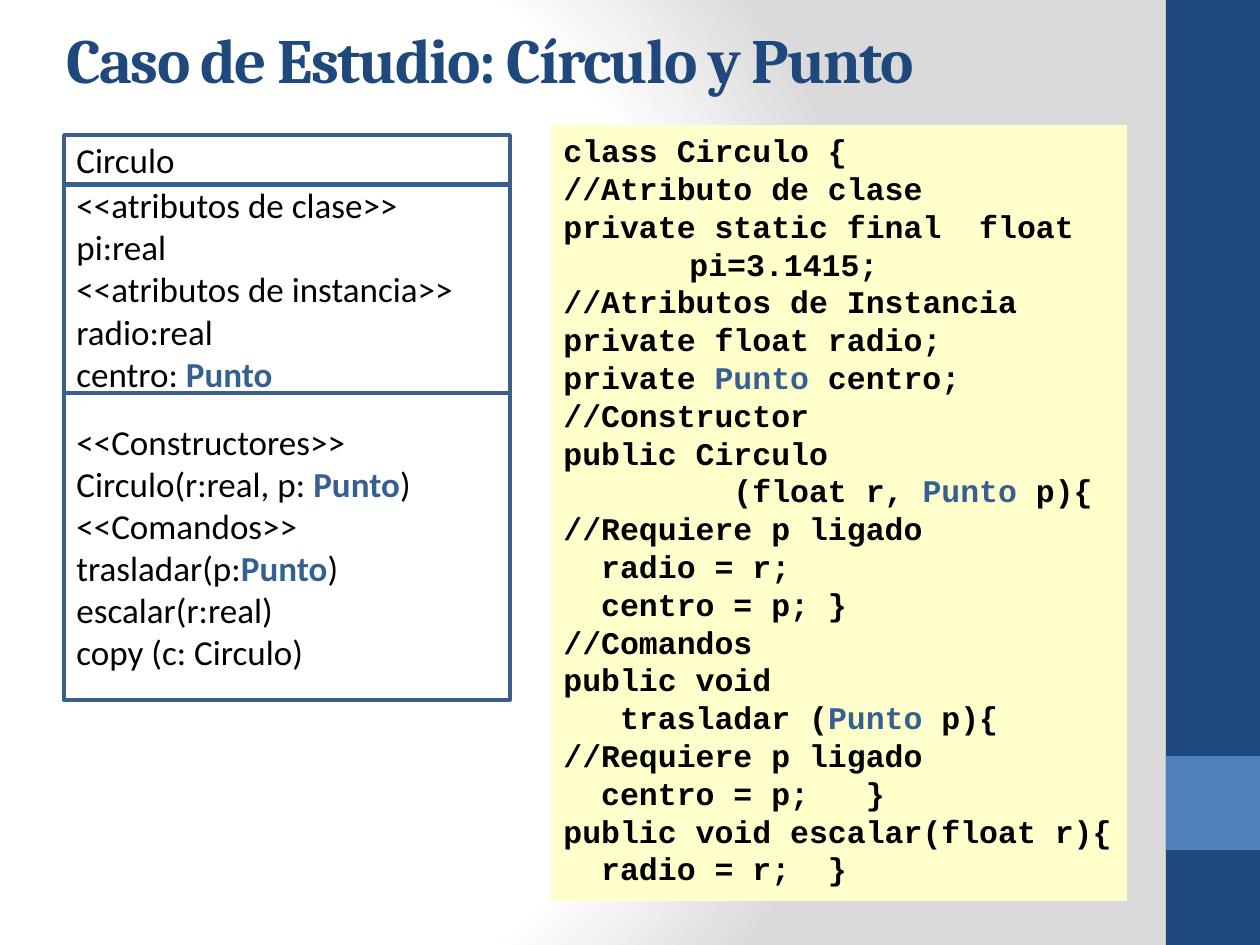
from dataclasses import dataclass

from pptx import Presentation
from pptx.dml.color import RGBColor as RGB
from pptx.enum.shapes import MSO_SHAPE as Shape
from pptx.enum.text import MSO_ANCHOR as Anchor, PP_ALIGN as Align
from pptx.oxml import parse_xml
from pptx.util import Pt

PX = 914400 / 126
WIDE, HIGH = 1260, 945
KEY = "Punto"


@dataclass(frozen=True)
class Theme:
    navy: str = "1F497D"
    blue: str = "4F81BD"
    edge: str = "3A5F8C"
    key: str = "376092"
    cream: str = "FFFFCC"
    white: str = "FFFFFF"
    gray: str = "DADADA"
    ink: str = "000000"
    head: tuple = ("Cambria", 36)
    body: tuple = ("Calibri", 20)
    code: tuple = ("Courier New", 18)


def emu(px):
    return round(px * PX)


class Deck:
    def __init__(self, theme):
        self.theme = theme
        self.prs = Presentation()
        self.prs.slide_width, self.prs.slide_height = emu(WIDE), emu(HIGH)
        self.slide = self.prs.slides.add_slide(self.prs.slide_layouts[6])

    def back(self):
        """Fill the background with a round gradient from white to gray."""
        t = self.theme
        stops = "".join(
            f'<a:gs pos="{pos * 1000}"><a:srgbClr val="{hue}"/></a:gs>'
            for pos, hue in ((0, t.white), (75, t.white), (100, t.gray)))
        self.slide.element.cSld.insert(0, parse_xml(
            '<p:bg xmlns:p="http://schemas.openxmlformats.org/presentationml/2006/main"'
            ' xmlns:a="http://schemas.openxmlformats.org/drawingml/2006/main">'
            f'<p:bgPr><a:gradFill rotWithShape="1"><a:gsLst>{stops}</a:gsLst>'
            '<a:path path="circle"><a:fillToRect l="20000" t="50000" r="100000"'
            ' b="50000"/></a:path></a:gradFill><a:effectLst/></p:bgPr></p:bg>'))

    def rect(self, x, y, w, h, fill, line=None):
        box = self.slide.shapes.add_shape(
            Shape.RECTANGLE, emu(x), emu(y), emu(w), emu(h))
        box.shadow.inherit = False
        box.fill.solid()
        box.fill.fore_color.rgb = RGB.from_string(fill)
        if line:
            box.line.color.rgb = RGB.from_string(line)
            box.line.width = Pt(2)
        else:
            box.line.fill.background()
        return box

    def style(self, par, font, hue, bold):
        par.alignment = Align.LEFT
        par.font.name, size = font
        par.font.size = Pt(size)
        par.font.bold = bold
        par.font.color.rgb = RGB.from_string(hue)

    def title(self, x, y, w, h, text):
        box = self.slide.shapes.add_textbox(emu(x), emu(y), emu(w), emu(h))
        frame = box.text_frame
        frame.word_wrap = True
        frame.vertical_anchor = Anchor.BOTTOM
        par = frame.paragraphs[0]
        self.style(par, self.theme.head, self.theme.navy, True)
        run = par.add_run()
        run.text = text
        run._r.get_or_add_rPr().set("spc", "-100")

    def lines(self, box, rows, font, bold=False, anchor=Anchor.MIDDLE, hang=0):
        """Write rows; leading spaces become indents, wrapped lines hang."""
        frame = box.text_frame
        frame.word_wrap = True
        frame.vertical_anchor = anchor
        for i, row in enumerate(rows):
            par = frame.add_paragraph() if i else frame.paragraphs[0]
            self.style(par, font, self.theme.ink, bold)
            text = row.lstrip()
            pad = Pt(font[1] * 0.6 * (len(row) - len(text)))
            props = par._p.get_or_add_pPr()
            props.set("marL", str(pad + emu(hang)))
            props.set("indent", str(-emu(hang)))
            for part in filter(None, text.partition(KEY)):
                run = par.add_run()
                run.text = part
                if part == KEY:
                    run.font.bold = True
                    run.font.color.rgb = RGB.from_string(self.theme.key)


CODE = """class Circulo {
//Atributo de clase
private static final  float pi=3.1415;
//Atributos de Instancia
private float radio;
private Punto centro;
//Constructor
public Circulo
         (float r, Punto p){
//Requiere p ligado
  radio = r;
  centro = p; }
//Comandos
public void
   trasladar (Punto p){
//Requiere p ligado
  centro = p;   }
public void escalar(float r){
  radio = r;  }""".splitlines()

UML = [
    (135, 49, ["Circulo"]),
    (185, 208, ["<<atributos de clase>>", "pi:real",
                "<<atributos de instancia>>", "radio:real", "centro: Punto"]),
    (393, 307, ["<<Constructores>>", "Circulo(r:real, p: Punto)",
                "<<Comandos>>", "trasladar(p:Punto)", "escalar(r:real)",
                "copy (c: Circulo)"]),
]


def main():
    t = Theme()
    deck = Deck(t)
    deck.back()
    deck.rect(1166, 0, 94, HIGH, t.navy)
    deck.rect(1166, 756, 94, 94, t.blue)
    deck.title(54, 6, 1040, 96, "Caso de Estudio: Círculo y Punto")
    code = deck.rect(551, 125, 576, 776, t.cream)
    deck.lines(code, CODE, t.code, bold=True, anchor=Anchor.TOP, hang=126)
    for y, h, rows in UML:
        deck.lines(deck.rect(64, y, 446, h, t.white, t.edge), rows, t.body)
    deck.prs.save("out.pptx")


if __name__ == "__main__":
    main()
